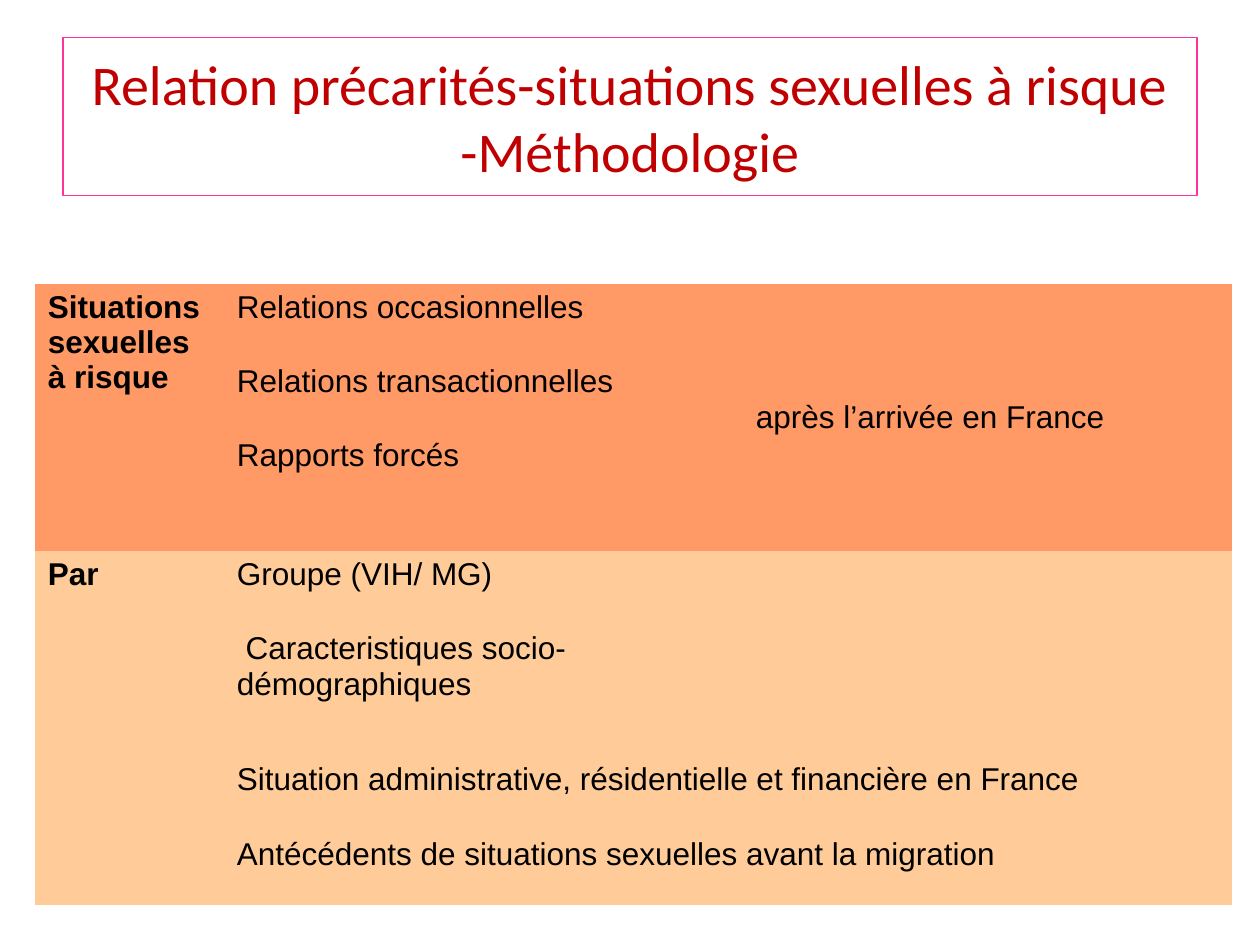
from pptx import Presentation
from pptx.dml.color import RGBColor
from pptx.enum.shapes import MSO_SHAPE
from pptx.enum.text import MSO_ANCHOR, PP_ALIGN
from pptx.oxml.ns import qn
from pptx.util import Inches, Pt

RECT = MSO_SHAPE.RECTANGLE
TOP, MIDDLE = MSO_ANCHOR.TOP, MSO_ANCHOR.MIDDLE
LEFT, CENTER = PP_ALIGN.LEFT, PP_ALIGN.CENTER
PLAIN = "{2D5ABB26-0587-4C30-8999-92F81FD0307C}"
WIDE, HIGH = 10, 7.5
COLS = [1.5, 3.71, 4.29]
ROWS = [0.59, 0.59, 0.74, 0.59, 1.04, 0.59, 0.59]
RISK, GROUP = "FF9966", "FFCC99"
FILLS = [RISK] * 3 + [GROUP] * 4
SPANS = [(0, 0, 2, 0), (0, 2, 2, 2), (3, 0, 6, 0),
         (3, 2, 4, 2), (5, 1, 5, 2), (6, 1, 6, 2)]
HEADS = {0: "Situations sexuelles à risque", 3: "Par"}
ITEMS = [
    "Relations occasionnelles",
    "Relations transactionnelles",
    "Rapports forcés",
    "Groupe (VIH/ MG)",
    " Caracteristiques socio-démographiques",
    "Situation administrative, résidentielle et financière en France",
    "Antécédents de situations sexuelles avant la migration",
]


def color(code):
    """Turn a hex string into a colour."""
    return RGBColor.from_string(code)


class Deck:
    """Holds the style and the current slide."""

    def __init__(self):
        """Start a deck with one blank slide."""
        self.show = Presentation()
        self.show.slide_width = Inches(WIDE)
        self.show.slide_height = Inches(HIGH)
        self.slide = self.show.slides.add_slide(self.show.slide_layouts[6])
        self.ink, self.edge = "C00000", "FF3399"

    def place(self, x, y, w, h):
        """Turn shares of the slide into lengths."""
        return [Inches(v) for v in (x * WIDE, y * HIGH, w * WIDE, h * HIGH)]

    def label(self, frame, text, size, font, ink, bold=False, align=LEFT):
        """Add one styled run to the first paragraph."""
        line = frame.paragraphs[0]
        line.alignment = align
        run = line.add_run()
        run.text = text
        run.font.size, run.font.name, run.font.bold = Pt(size), font, bold
        run.font.color.rgb = color(ink)

    def title(self, text, *area):
        """Draw the framed title."""
        box = self.slide.shapes.add_shape(RECT, *self.place(*area))
        box.shadow.inherit = False
        box.fill.background()
        box.line.color.rgb = color(self.edge)
        box.line.width = Pt(0.75)
        frame = box.text_frame
        frame.word_wrap = True
        frame.vertical_anchor = MIDDLE
        self.label(frame, text, 32, "Calibri", self.ink, align=CENTER)

    def table(self, *area):
        """Draw the plain grid with its fills and merged cells."""
        shape = self.slide.shapes.add_table(len(ROWS), len(COLS), *self.place(*area))
        grid = shape.table
        grid.first_row = grid.horz_banding = False
        grid._tbl.tblPr.find(qn("a:tableStyleId")).text = PLAIN
        for col, width in zip(grid.columns, COLS):
            col.width = Inches(width)
        for row, height, code in zip(grid.rows, ROWS, FILLS):
            row.height = Inches(height)
            for cell in row.cells:
                cell.fill.solid()
                cell.fill.fore_color.rgb = color(code)
        for top, left, low, right in SPANS:
            grid.cell(top, left).merge(grid.cell(low, right))
        return grid

    def entry(self, cell, text, bold=False, anchor=TOP, inset=0.1):
        """Fill one table cell with text."""
        cell.vertical_anchor = anchor
        cell.margin_left = Inches(inset)
        self.label(cell.text_frame, text, 18, "Arial", "000000", bold)


def main():
    """Build and save the slide."""
    deck = Deck()
    deck.title("Relation précarités-situations sexuelles à risque -Méthodologie",
               0.05, 0.04, 0.9, 1 / 6)
    grid = deck.table(0.028, 0.3, sum(COLS) / WIDE, sum(ROWS) / HIGH)
    for row, text in HEADS.items():
        deck.entry(grid.cell(row, 0), text, bold=True)
    for row, text in enumerate(ITEMS):
        deck.entry(grid.cell(row, 1), text)
    deck.entry(grid.cell(0, 2), "après l’arrivée en France", anchor=MIDDLE, inset=0.51)
    deck.show.save("out.pptx")


if __name__ == "__main__":
    main()
